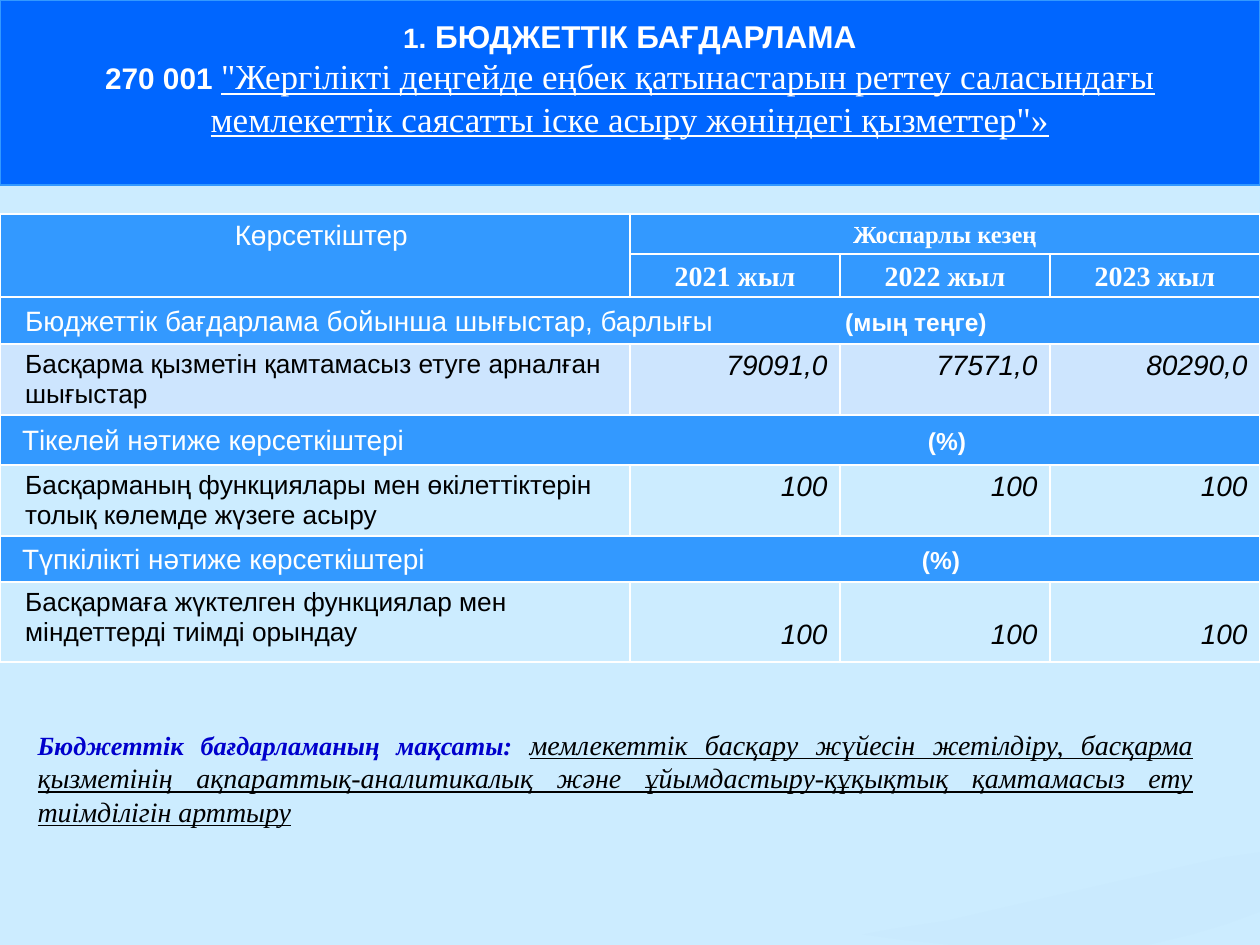
"""Build the budget programme slide with its table of yearly figures."""
from dataclasses import dataclass
from lxml.etree import SubElement
from pptx import Presentation
from pptx.dml.color import RGBColor
from pptx.enum.text import MSO_ANCHOR, MSO_AUTO_SIZE, PP_ALIGN
from pptx.oxml import parse_xml
from pptx.oxml.ns import nsdecls, qn
from pptx.util import Pt


@dataclass(frozen=True)
class Theme:
    back: str = "CCECFF"
    band: str = "0066FF"
    head: str = "3399FF"
    pale: str = "CDE5FE"
    wave: str = "C6E7FC"
    white: str = "FFFFFF"
    black: str = "000000"
    navy: str = "0000CC"
    sans: str = "Arial"
    serif: str = "Times New Roman"
    tiny: int = 14
    small: int = 15
    base: int = 16
    code: int = 17
    large: int = 18
    huge: int = 20


theme = Theme()


def style(font, size, color, face=theme.sans, bold=False, italic=False, under=False):
    font.size, font.name = Pt(size), face
    font.color.rgb = RGBColor.from_string(color)
    font.bold, font.italic, font.underline = bold, italic, under


def paint(cell, color, top=3.6, left=7.2, anchor=MSO_ANCHOR.TOP):
    cell.margin_top, cell.margin_bottom = Pt(top), Pt(2.4)
    cell.margin_left, cell.margin_right = Pt(left), Pt(7.2)
    cell.vertical_anchor = anchor
    props = cell._tc.get_or_add_tcPr()
    for spot, side in enumerate("LRTB"):
        props.insert(spot, parse_xml(
            f'<a:ln{side} {nsdecls("a")} w="12700"><a:solidFill>'
            f'<a:srgbClr val="{theme.white}"/></a:solidFill></a:ln{side}>'))
    if color:
        cell.fill.solid()
        cell.fill.fore_color.rgb = RGBColor.from_string(color)
    else:
        cell.fill.background()


deck = Presentation()
deck.slide_width, deck.slide_height = Pt(720), Pt(540)
slide = deck.slides.add_slide(deck.slide_layouts[5])
slide.background.fill.solid()
slide.background.fill.fore_color.rgb = RGBColor.from_string(theme.back)

heights = [22.9, 24.6, 26.8, 40.6, 28.6, 40.6, 26.3, 45.7]
frame = slide.shapes.add_table(8, 4, Pt(0), Pt(122.3), Pt(720), Pt(sum(heights)))
table = frame.table
table.first_row = table.horz_banding = False
for col, width in zip(table.columns, [360, 120, 120, 120]):
    col.width = Pt(width)
for row, height in zip(table.rows, heights):
    row.height = Pt(height)

for col in range(4):
    for row in range(2):
        paint(table.cell(row, col), theme.head, left=7.2 if col else 14.4,
              anchor=MSO_ANCHOR.MIDDLE if col else MSO_ANCHOR.TOP)
table.cell(0, 0).merge(table.cell(1, 0))
table.cell(0, 1).merge(table.cell(0, 3))
heads = [(0, 0, "Көрсеткіштер", theme.base, theme.sans),
         (0, 1, "Жоспарлы кезең", theme.tiny, theme.serif)]
heads += [(1, col, f"{2020 + col} жыл", theme.base, theme.serif) for col in (1, 2, 3)]
for row, col, text, size, face in heads:
    para = table.cell(row, col).text_frame.paragraphs[0]
    para.text, para.alignment = text, PP_ALIGN.CENTER
    style(para.font, size, theme.white, face, bold=col > 0)

bands = [
    (2, "Бюджеттік бағдарлама бойынша шығыстар, барлығы", "(мың теңге)", 14.4, 468.6),
    (4, "Тікелей нәтиже көрсеткіштері", "(%)", 12.6, 517.7),
    (6, "Түпкілікті нәтиже көрсеткіштері", "(%)", 12.6, 514.2),
]
for row, text, unit, left, stop in bands:
    for col in range(4):
        paint(table.cell(row, col), theme.head, left=left, anchor=MSO_ANCHOR.MIDDLE)
    cell = table.cell(row, 0)
    cell.merge(table.cell(row, 3))
    para = cell.text_frame.paragraphs[0]
    tabs = SubElement(para._p.get_or_add_pPr(), qn("a:tabLst"))
    SubElement(tabs, qn("a:tab"), pos=str(Pt(stop)), algn="l")
    for part, size, bold in [(text + "\t", theme.base, False), (unit, theme.tiny, True)]:
        run = para.add_run()
        run.text = part
        style(run.font, size, theme.white, bold=bold)

goals = [
    (3, "Басқарма қызметін қамтамасыз етуге арналған шығыстар",
     ["79091,0", "77571,0", "80290,0"], theme.pale, 3.6),
    (5, "Басқарманың функциялары мен өкілеттіктерін толық көлемде жүзеге асыру",
     ["100"] * 3, None, 3.6),
    (7, "Басқармаға жүктелген функциялар мен міндеттерді тиімді орындау",
     ["100"] * 3, None, 21.5),
]
for row, text, values, color, top in goals:
    for col, entry in enumerate([text] + values):
        cell = table.cell(row, col)
        paint(cell, color, top if col else 3.6, 7.2 if col else 14.4)
        para = cell.text_frame.paragraphs[0]
        para.text = entry
        para.alignment = PP_ALIGN.RIGHT if col else PP_ALIGN.LEFT
        style(para.font, theme.base if col else theme.small, theme.black, italic=col > 0)

curve = [(699, 490), (659, 499), (637, 504), (559, 522), (542, 526), (509, 531),
         (493, 534), (515, 537), (544, 540), (656, 540), (681, 534), (701, 528), (720, 521)]
draft = slide.shapes.build_freeform(720, 487, scale=Pt(1))
draft.add_line_segments(curve, close=True)
wave = draft.convert_to_shape()
wave.shadow.inherit = False
wave.line.fill.background()
wave.fill.solid()
wave.fill.fore_color.rgb = RGBColor.from_string(theme.wave)
tint = wave._element.spPr.find(qn("a:solidFill"))[0]
SubElement(tint, qn("a:alpha"), val="30000")

note = slide.shapes.add_textbox(Pt(14.4), Pt(412), Pt(674.6), Pt(65.5))
note.text_frame.word_wrap = True
para = note.text_frame.paragraphs[0]
para.alignment = PP_ALIGN.JUSTIFY
aims = [
    ("Бюджеттік бағдарламаның мақсаты: ", theme.small, theme.navy, True),
    ("мемлекеттік басқару жүйесін жетілдіру, басқарма қызметінің "
     "ақпараттық-аналитикалық және ұйымдастыру-құқықтық қамтамасыз ету "
     "тиімділігін арттыру", theme.base, theme.black, False),
]
for text, size, color, bold in aims:
    run = para.add_run()
    run.text = text
    style(run.font, size, color, theme.serif, bold, italic=True, under=not bold)

title = slide.shapes.title
title.left, title.top, title.width, title.height = Pt(0), Pt(0), Pt(720), Pt(105.8)
title.fill.solid()
title.fill.fore_color.rgb = RGBColor.from_string(theme.band)
title.line.color.rgb = RGBColor.from_string(theme.head)
title.line.width = Pt(0.75)
body = title.text_frame
body.word_wrap, body.auto_size = True, MSO_AUTO_SIZE.NONE
body.vertical_anchor, body.margin_top = MSO_ANCHOR.TOP, Pt(9.8)
para = body.paragraphs[0]
para.alignment = PP_ALIGN.CENTER
lines = [
    [("1.", theme.base, theme.sans), (" БЮДЖЕТТІК БАҒДАРЛАМА", theme.large, theme.sans)],
    [("270 001 ", theme.code, theme.sans),
     ("\"Жергілікті деңгейде еңбек қатынастарын реттеу саласындағы мемлекеттік "
      "саясатты іске асыру жөніндегі қызметтер\"»", theme.huge, theme.serif)],
]
for spot, line in enumerate(lines):
    if spot:
        para.add_line_break()
    for text, size, face in line:
        run = para.add_run()
        run.text = text
        plain = face == theme.serif
        style(run.font, size, theme.white, face, bold=not plain, under=plain)

deck.save("out.pptx")
